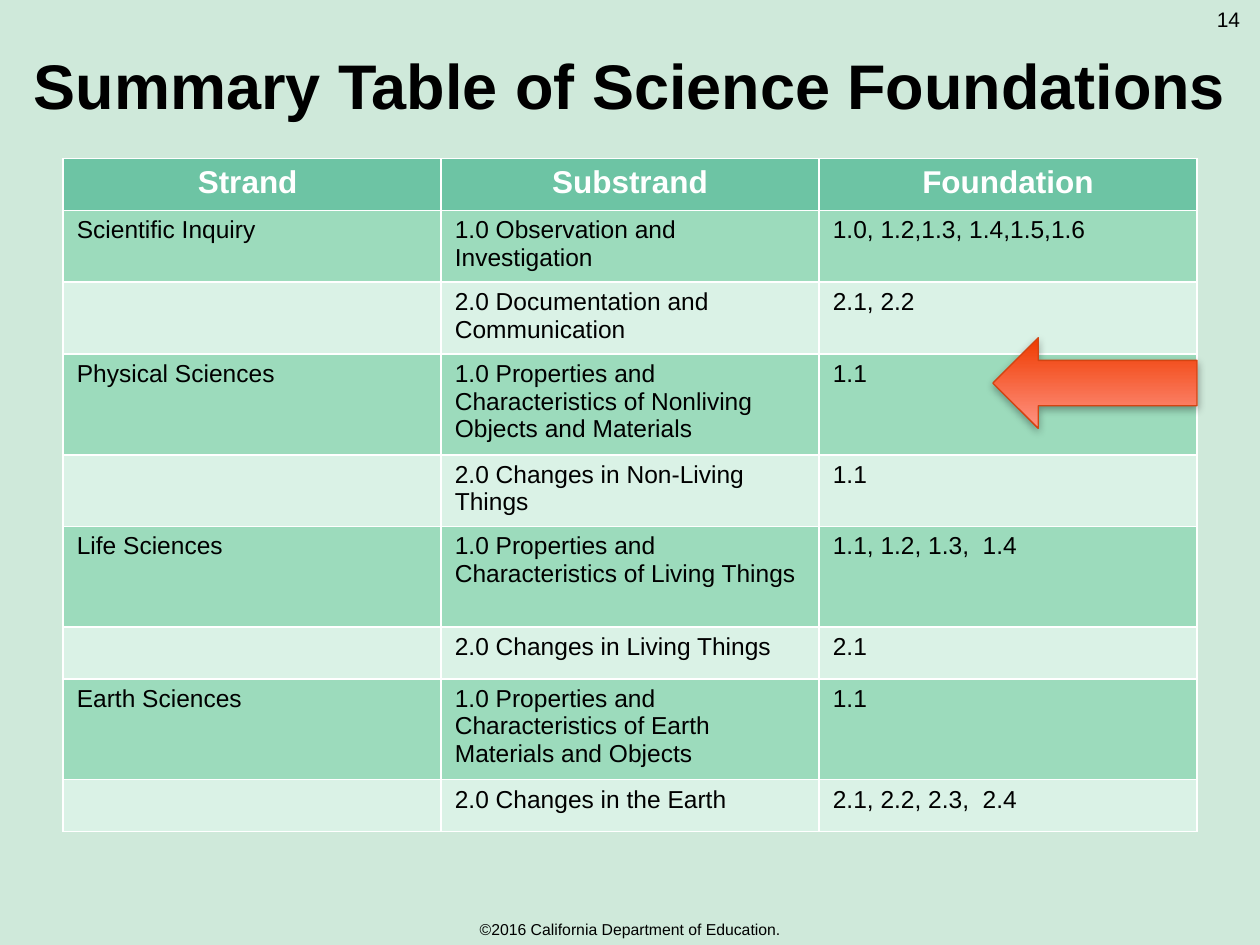
from lxml import etree
from pptx import Presentation
from pptx.dml.color import RGBColor
from pptx.enum.shapes import MSO_SHAPE as Shape
from pptx.enum.text import MSO_ANCHOR as Anchor, PP_ALIGN as Align
from pptx.oxml.ns import qn
from pptx.util import Inches, Pt

COLORS = {
    "background": "CFE9DA", "text": "000000", "header_text": "FFFFFF",
    "header": "6DC4A4", "band_dark": "9CDBBC", "band_light": "DAF2E6",
    "arrow_dark": "EF3B00", "arrow_light": "FF9383", "arrow_line": "D34412",
    "shadow": "000000",
}

HEADINGS = ["Strand ", "Substrand", "Foundation"]
# Row height, strand, substrand, foundation
FOUNDATIONS = [
    (0.57, "Scientific Inquiry", "1.0 Observation and Investigation", "1.0, 1.2,1.3, 1.4,1.5,1.6"),
    (0.57, "", "2.0 Documentation and Communication", "2.1, 2.2"),
    (0.8, "Physical Sciences",
     "1.0 Properties and Characteristics of Nonliving Objects and Materials", "1.1"),
    (0.53, "", "2.0 Changes in Non-Living Things", "1.1"),
    (0.8, "Life Sciences",
     "1.0 Properties and Characteristics of Living Things", "1.1, 1.2, 1.3,  1.4"),
    (0.41, "", "2.0 Changes in Living Things", "2.1"),
    (0.8, "Earth Sciences",
     "1.0 Properties and Characteristics of Earth Materials and Objects", "1.1"),
    (0.41, "", "2.0 Changes in the Earth", "2.1, 2.2, 2.3,  2.4"),
]
HEADER_HEIGHT = 0.41


def color(name):
    return RGBColor.from_string(COLORS[name])


class SlideBuilder:
    font_name = "Arial"

    def __init__(self, slide):
        self.slide = slide
        fill = slide.background.fill
        fill.solid()
        fill.fore_color.rgb = color("background")

    def style(self, paragraph, size, bold=False, color_name="text", align=Align.LEFT):
        paragraph.alignment = align
        font = paragraph.font
        font.name, font.size, font.bold = self.font_name, Pt(size), bold
        font.color.rgb = color(color_name)

    def text(self, box, words, size, bold=False, anchor=Anchor.MIDDLE):
        shape = self.slide.shapes.add_textbox(*map(Inches, box))
        frame = shape.text_frame
        frame.word_wrap = True
        frame.vertical_anchor = anchor
        frame.text = words
        self.style(frame.paragraphs[0], size, bold, align=Align.CENTER)

    def cell(self, cell, words, fill_name, size, **style):
        cell.fill.solid()
        cell.fill.fore_color.rgb = color(fill_name)
        cell.margin_left = cell.margin_right = Inches(0.11)
        cell.text = words
        self.style(cell.text_frame.paragraphs[0], size, **style)

    def table(self, left, top, width, headings, rows):
        heights = [HEADER_HEIGHT] + [row[0] for row in rows]
        box = map(Inches, (left, top, width, sum(heights)))
        table = self.slide.shapes.add_table(len(heights), len(headings), *box).table
        for row, height in zip(table.rows, heights):
            row.height = Inches(height)
        for column, heading in enumerate(headings):
            self.cell(table.cell(0, column), heading, "header", 18, bold=True,
                      color_name="header_text", align=Align.CENTER)
        for index, (_, *words) in enumerate(rows, start=1):
            band = "band_dark" if index % 2 else "band_light"
            for column, value in enumerate(words):
                self.cell(table.cell(index, column), value, band, 14)

    def arrow(self, box):
        shape = self.slide.shapes.add_shape(Shape.RIGHT_ARROW, *map(Inches, box))
        shape.rotation = 180
        shape.fill.gradient()
        shape.fill.gradient_angle = 90
        for stop, name in zip(shape.fill.gradient_stops, ("arrow_dark", "arrow_light")):
            stop.color.rgb = color(name)
            stop.position = 0 if name == "arrow_dark" else 1
        shape.line.color.rgb = color("arrow_line")
        shape.line.width = Pt(0.75)
        self.drop_shadow(shape)

    def drop_shadow(self, shape):
        shape.shadow.inherit = False
        effects = shape._element.spPr.find(qn("a:effectLst"))
        shadow = etree.SubElement(effects, qn("a:outerShdw"), blurRad=str(Pt(5)),
                                  dist=str(Pt(1.8)), dir="5400000", rotWithShape="0")
        tint = etree.SubElement(shadow, qn("a:srgbClr"), val=COLORS["shadow"])
        etree.SubElement(tint, qn("a:alpha"), val="35000")


def main():
    presentation = Presentation()
    presentation.slide_width, presentation.slide_height = Inches(10), Inches(7.5)
    builder = SlideBuilder(presentation.slides.add_slide(presentation.slide_layouts[6]))

    # Footer and title
    builder.text((0.41, 7.25, 9.18, 0.25), "©2016 California Department of Education.", 9)
    builder.text((0, 0.04, 10, 1.25), "Summary Table of Science Foundations", 36, bold=True)

    # Foundations table
    builder.table(0.5, 1.26, 9, HEADINGS, FOUNDATIONS)

    # Slide number
    builder.text((9.5, 0, 0.5, 0.4), "14", 12, anchor=Anchor.TOP)

    # Arrow pointing at the physical sciences foundation
    builder.arrow((7.88, 2.68, 1.62, 0.72))

    presentation.save("out.pptx")


if __name__ == "__main__":
    main()
